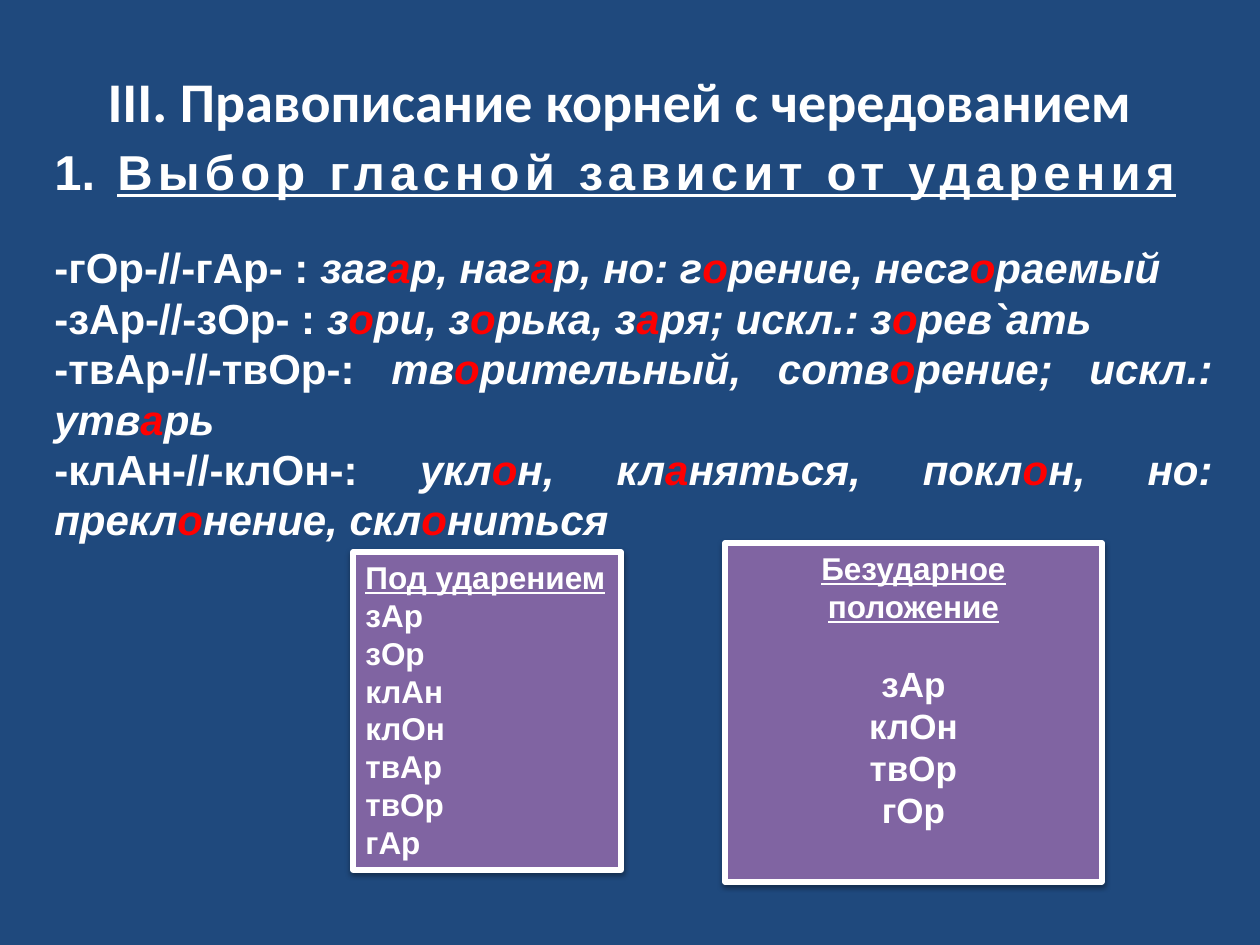
from lxml import etree
from pptx import Presentation
from pptx import util as u
from pptx.dml.color import RGBColor
from pptx.enum import shapes, text
from pptx.oxml.ns import qn

# Content: letters between asterisks are highlighted
TITLE = "III. Правописание корней с чередованием"
RULE = "Выбор гласной зависит от ударения"
ROOTS = [
    ("-гОр-//-гАр- : ", "заг*а*р, наг*а*р, но: г*о*рение, несг*о*раемый"),
    ("-зАр-//-зОр- : ", "з*о*ри, з*о*рька, з*а*ря; искл.: з*о*рев`ать"),
    ("-твАр-//-твОр-: ", "тв*о*рительный, сотв*о*рение; искл.: утв*а*рь"),
    ("-клАн-//-клОн-: ", "укл*о*н, кл*а*няться, покл*о*н, но: прекл*о*нение, скл*о*ниться"),
]
CARDS = [
    dict(box=(353, 552, 268, 318), head="Под ударением",
         items=["зАр", "зОр", "клАн", "клОн", "твАр", "твОр", "гАр"],
         size="label", align="LEFT", gap=0, wrap=False),
    dict(box=(725, 543, 377, 339), head="Безударное положение",
         items=["зАр", "клОн", "твОр", "гОр"],
         size="item", align="CENTER", gap=21.6, wrap=True),
]
TITLE_BOX = (53, 37, 1134, 127)
BODY_BOX = (42, 135, 1183, 420)
INDENT = 63

THEME = dict(
    back="1F497D", card="8064A2", ink="FFFFFF", accent="FF0000", shadow="000000",
    head_font="Calibri", body_font="Arial",
    title=32, rule=28, body=24, item=20, label=18, leading=1.2,
)
PX = 914400 / 126


def px(n):
    return u.Emu(round(n * PX))


def rgb(name):
    return RGBColor.from_string(THEME[name])


def add_run(p, words, size="body", font="body_font", color="ink",
            italic=False, underline=False, spacing=0):
    r = p.add_run()
    r.text = words
    f = r.font
    f.name, f.size, f.bold = THEME[font], u.Pt(THEME[size]), True
    f.italic, f.underline = italic, underline
    f.color.rgb = rgb(color)
    if spacing:
        r._r.get_or_add_rPr().set("spc", str(spacing * 100))


def add_par(tf, size, align, before=0):
    p = tf.paragraphs[0]
    if p.runs:
        p = tf.add_paragraph()
    p.alignment = text.PP_ALIGN[align]
    p.line_spacing = u.Pt(THEME[size] * THEME["leading"])
    if before:
        p.space_before = u.Pt(before)
    return p


def frame(sp, wrap=True, anchor="TOP", fit="SHAPE_TO_FIT_TEXT"):
    tf = sp.text_frame
    tf.word_wrap = wrap
    tf.auto_size = text.MSO_AUTO_SIZE[fit]
    tf.vertical_anchor = text.MSO_ANCHOR[anchor]
    return tf


def add_shadow(sp):
    sp.shadow.inherit = False
    effects = sp._element.spPr.find(qn("a:effectLst"))
    shadow = etree.SubElement(effects, qn("a:outerShdw"), blurRad="40000",
                              dist="20000", dir="5400000", rotWithShape="0")
    color = etree.SubElement(shadow, qn("a:srgbClr"), val=THEME["shadow"])
    etree.SubElement(color, qn("a:alpha"), val="38000")


def add_card(s, box, head, items, size, align, gap, wrap):
    sp = s.shapes.add_shape(shapes.MSO_SHAPE.RECTANGLE, *map(px, box))
    sp.fill.solid()
    sp.fill.fore_color.rgb = rgb("card")
    sp.line.color.rgb = rgb("ink")
    sp.line.width = u.Pt(3)
    add_shadow(sp)
    tf = frame(sp, wrap)
    add_run(add_par(tf, "label", align), head, size="label", underline=True)
    for i, item in enumerate(items):
        p = add_par(tf, size, align, before=0 if i else gap)
        add_run(p, item, size=size)


def main():
    prs = Presentation()
    prs.slide_width, prs.slide_height = px(1260), px(945)
    s = prs.slides.add_slide(prs.slide_layouts[6])
    s.background.fill.solid()
    s.background.fill.fore_color.rgb = rgb("back")

    # Title
    tf = frame(s.shapes.add_textbox(*map(px, TITLE_BOX)), anchor="MIDDLE", fit="NONE")
    p = tf.paragraphs[0]
    p.alignment = text.PP_ALIGN.CENTER
    add_run(p, TITLE, size="title", font="head_font")

    # Numbered rule
    tf = frame(s.shapes.add_textbox(*map(px, BODY_BOX)))
    p = add_par(tf, "rule", "JUSTIFY")
    pPr = p._p.get_or_add_pPr()
    pPr.set("marL", str(px(INDENT)))
    pPr.set("indent", str(-px(INDENT)))
    etree.SubElement(pPr, qn("a:buFont"), typeface=THEME["body_font"])
    etree.SubElement(pPr, qn("a:buAutoNum"), type="arabicPeriod")
    add_run(p, RULE, size="rule", underline=True, spacing=3)

    # Roots with examples
    for i, (root, examples) in enumerate(ROOTS):
        p = add_par(tf, "body", "JUSTIFY", before=0 if i else 24)
        add_run(p, root)
        for k, part in enumerate(examples.split("*")):
            add_run(p, part, italic=True, color="accent" if k % 2 else "ink")

    # Summary cards
    for card in CARDS:
        add_card(s, **card)

    prs.save("out.pptx")


if __name__ == "__main__":
    main()
